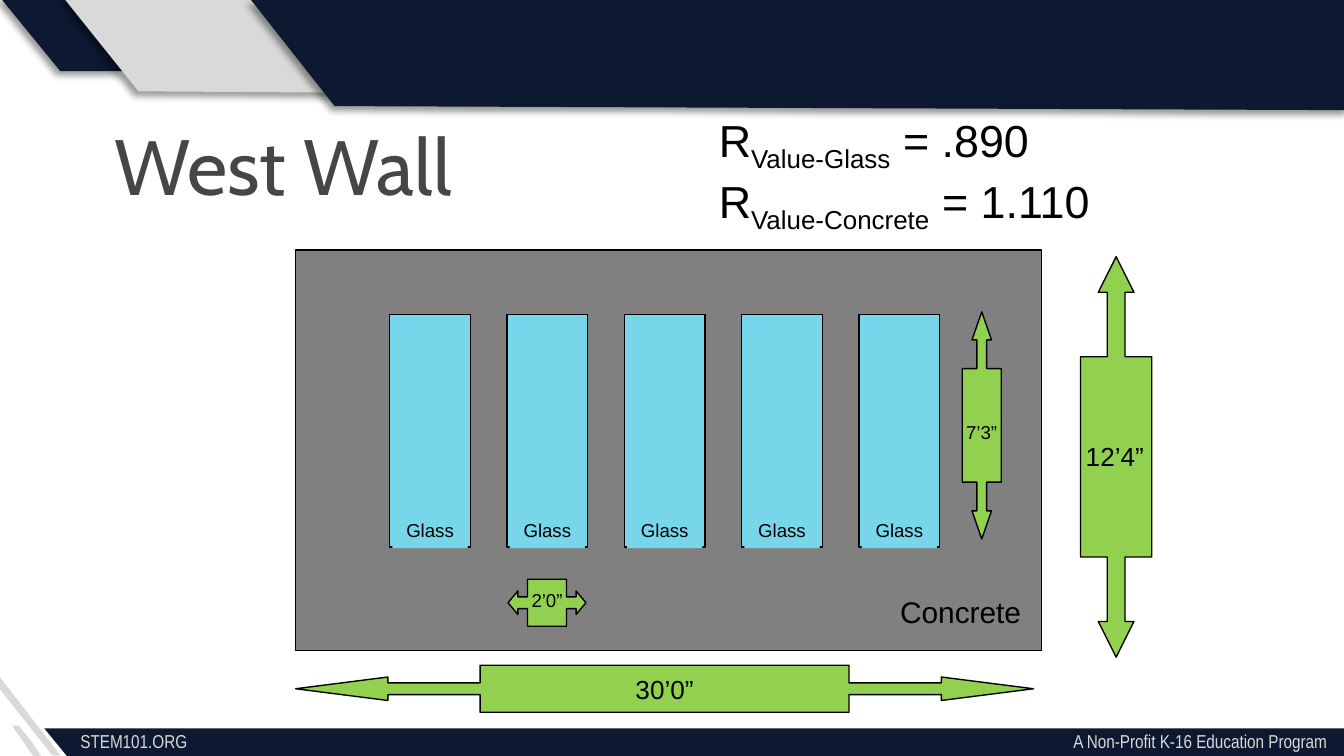
from typing import NamedTuple

from lxml.etree import SubElement
from pptx import Presentation
from pptx.dml.color import RGBColor
from pptx.enum.shapes import MSO_SHAPE as Preset
from pptx.enum.text import MSO_ANCHOR as Anchor, MSO_AUTO_SIZE as AutoSize, PP_ALIGN as Align
from pptx.oxml.ns import qn
from pptx.util import Emu, Inches, Pt

CELL = Inches(0.1)
UNITS_PER_CELL = 10
COLORS = {
    "navy": "0C1930",
    "silver": "D9D9D9",
    "concrete": "808080",
    "glass": "78D6EA",
    "arrow": "92D050",
    "title": "464646",
    "ink": "000000",
}


class Area(NamedTuple):
    col: float
    row: float
    cols: float
    rows: float

    def emu(self) -> list[Emu]:
        return [Emu(round(value * CELL)) for value in self]


class Style(NamedTuple):
    size: float
    color: str = "ink"
    font: str = "Arial"
    align: Align = Align.LEFT


class Ribbon(NamedTuple):
    color: str
    points: list[tuple[float, float]]
    shadow: bool = False


class Label(NamedTuple):
    text: str
    area: Area
    style: Style


class Dimension(NamedTuple):
    preset: Preset
    area: Area
    head: float
    label: Label


class RValue(NamedTuple):
    material: str
    value: str


SMALL = Style(10, align=Align.CENTER)
FOOTER = Style(10, "silver", "Arial Narrow")
PANES, PANE_PITCH = 5, 8.73

RIBBONS = [
    Ribbon("navy", [(4.5, 5.3), (0, -0.2), (4.8, -0.2), (9.3, 5.3)], True),
    Ribbon("silver", [(10.3, 6.8), (4.7, -0.2), (20.4, -0.2), (25.9, 6.9)], True),
    Ribbon("silver", [(3.1, 56.3), (2.5, 56.3), (0.9, 54), (1.4, 54), (2.2, 55)]),
    Ribbon("silver", [(4.5, 56.2), (3.9, 56.2), (0, 51.3), (0, 50.4)]),
    Ribbon("navy", [(24.9, 7.9), (18.6, -0.1), (100.2, -0.1), (100.4, 8.2)], True),
    Ribbon("navy", [(100.6, 56.5), (5.1, 56.4), (3.3, 54.2), (100.7, 54.2)]),
]
LABELS = [
    Label("STEM101.ORG", Area(5, 53.8, 30, 2.7), FOOTER),
    Label("A Non-Profit K-16 Education Program", Area(59.7, 53.8, 40, 2.7),
          FOOTER._replace(align=Align.RIGHT)),
    Label("Concrete", Area(66, 43.7, 11.4, 3.7), Style(16)),
]
DIMENSIONS = [
    Dimension(Preset.UP_DOWN_ARROW_CALLOUT, Area(80.4, 19.1, 5.3, 29.8), 0.5,
              Label("12’4”", Area(79.8, 32.3, 6.8, 3.4), Style(14))),
    Dimension(Preset.LEFT_RIGHT_ARROW_CALLOUT, Area(22, 49.5, 54.9, 3.5), 1.96,
              Label("30’0”", Area(36, 49.6, 26.9, 3.4), Style(14, align=Align.CENTER))),
    Dimension(Preset.LEFT_RIGHT_ARROW_CALLOUT, Area(37.8, 43.1, 5.8, 3.5), 0.21,
              Label("2’0”", Area(37.8, 43.3, 5.8, 2.7), SMALL)),
    Dimension(Preset.UP_DOWN_ARROW_CALLOUT, Area(71.6, 23.2, 2.9, 16.9), 0.72,
              Label("7’3”", Area(70.9, 30.8, 4.9, 2.7), Style(10))),
]
R_VALUES = [RValue("Glass", ".890"), RValue("Concrete", "1.110")]


def rgb(name: str) -> RGBColor:
    return RGBColor.from_string(COLORS[name])


def paint(shape, color: str, outlined: bool = False) -> None:
    shape.shadow.inherit = False
    shape.fill.solid()
    shape.fill.fore_color.rgb = rgb(color)
    if outlined:
        shape.line.color.rgb = rgb("ink")
        shape.line.width = Pt(0.75)
    else:
        shape.line.fill.background()


def format_para(para, style: Style) -> None:
    para.alignment = style.align
    for span in para.runs:
        span.font.name = style.font
        span.font.size = Pt(style.size)
        span.font.color.rgb = rgb(style.color)


def write(shape, text: str, style: Style) -> None:
    frame = shape.text_frame
    frame.text = text
    frame.word_wrap = True
    frame.vertical_anchor = Anchor.TOP
    format_para(frame.paragraphs[0], style)


def add_label(page, label: Label) -> None:
    write(page.shapes.add_textbox(*label.area.emu()), label.text, label.style)


def add_ribbon(page, ribbon: Ribbon) -> None:
    points = [(col * UNITS_PER_CELL, row * UNITS_PER_CELL) for col, row in ribbon.points]
    builder = page.shapes.build_freeform(*points[0], scale=CELL / UNITS_PER_CELL)
    builder.add_line_segments(points[1:], close=True)
    shape = builder.convert_to_shape()
    paint(shape, ribbon.color)
    if ribbon.shadow:
        effects = shape._element.spPr.find(qn("a:effectLst"))
        shadow = SubElement(effects, qn("a:outerShdw"), blurRad=str(Pt(4)),
                            dist=str(Pt(3)), dir="8100000", rotWithShape="0")
        tint = SubElement(shadow, qn("a:srgbClr"), val=COLORS["ink"])
        SubElement(tint, qn("a:alpha"), val="40000")


def add_block(page, area: Area, color: str, outlined: bool = True, preset: Preset = Preset.RECTANGLE):
    shape = page.shapes.add_shape(preset, *area.emu())
    paint(shape, color, outlined)
    return shape


def add_pane(page, col: float) -> None:
    add_block(page, Area(col, 23.4, 6, 17.3), "glass")
    caption = add_block(page, Area(col + 0.2, 38.1, 5.6, 2.7), "glass", outlined=False)
    write(caption, "Glass", SMALL)


def add_dimension(page, dimension: Dimension) -> None:
    arrow = add_block(page, dimension.area, "arrow", preset=dimension.preset)
    for index, value in enumerate((0.25, 0.25, dimension.head, 0.5)):
        arrow.adjustments[index] = value
    add_label(page, dimension.label)


def add_r_values(page, area: Area) -> None:
    frame = page.shapes.add_textbox(*area.emu()).text_frame
    frame.word_wrap = False
    for index, entry in enumerate(R_VALUES):
        para = frame.paragraphs[0] if index == 0 else frame.add_paragraph()
        for text in ("R", f"Value-{entry.material}", f" = {entry.value}"):
            para.add_run().text = text
        format_para(para, Style(24))
        para.runs[1]._r.get_or_add_rPr().set("baseline", "-25000")


def add_title(page, text: str, area: Area) -> None:
    title = page.shapes.title
    title.left, title.top, title.width, title.height = area.emu()
    write(title, text, Style(42, "title", "Cabin"))
    title.text_frame.auto_size = AutoSize.NONE
    title.text_frame.margin_top = Inches(0.08)


def main() -> None:
    deck = Presentation()
    deck.slide_width, deck.slide_height = 100 * CELL, round(56.25 * CELL)
    page = deck.slides.add_slide(deck.slide_layouts.get_by_name("Title Only"))
    add_title(page, "West Wall", Area(7.5, 7.9, 85, 12.5))
    for ribbon in RIBBONS:
        add_ribbon(page, ribbon)
    add_block(page, Area(22, 18.6, 55.5, 29.8), "concrete")
    for index in range(PANES):
        add_pane(page, 29 + index * PANE_PITCH)
    for dimension in DIMENSIONS:
        add_dimension(page, dimension)
    for label in LABELS:
        add_label(page, label)
    add_r_values(page, Area(52.5, 7.9, 32, 9))
    deck.save("out.pptx")


if __name__ == "__main__":
    main()
